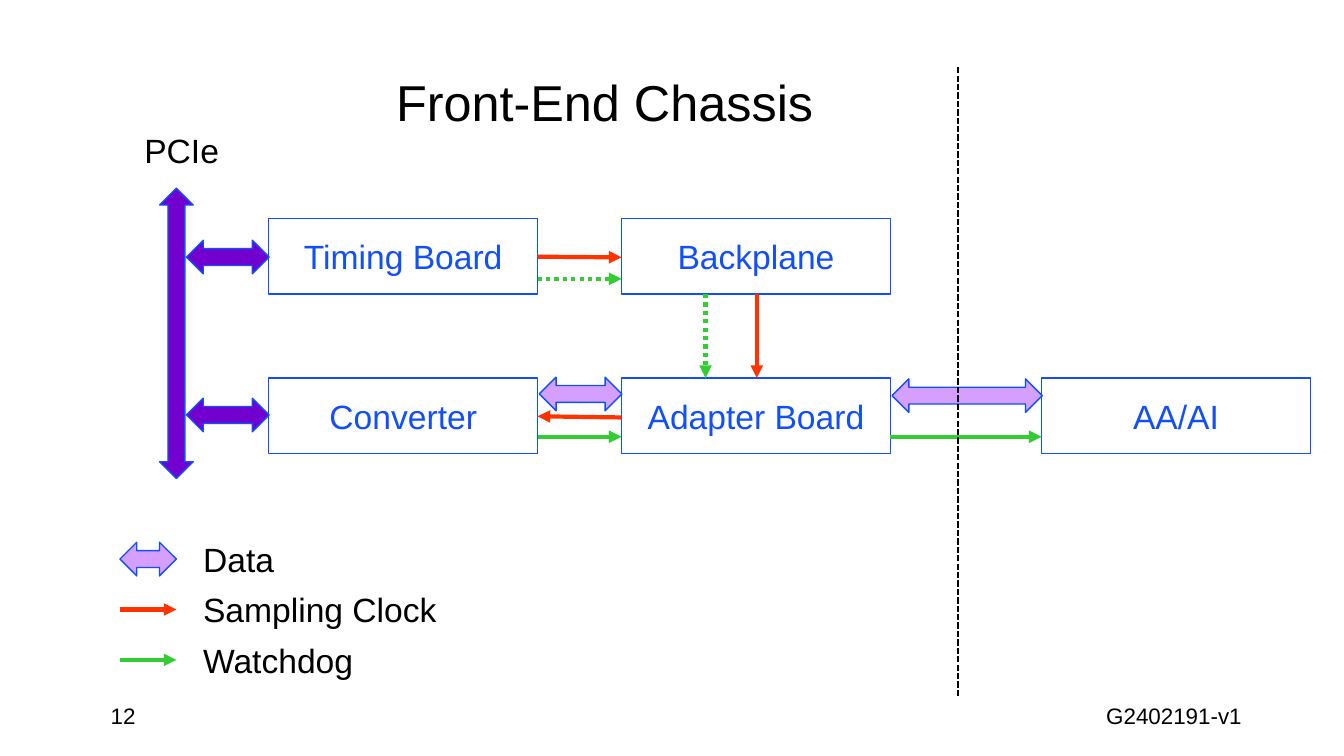
"""Builds the front-end chassis block diagram slide."""
from lxml.etree import SubElement
from pptx import Presentation
from pptx.dml.color import RGBColor
from pptx.enum.dml import MSO_LINE
from pptx.enum.shapes import MSO_CONNECTOR, MSO_SHAPE
from pptx.enum.text import MSO_ANCHOR, PP_ALIGN
from pptx.oxml.ns import qn
from pptx.util import Inches, Pt

COLORS = {
    "text": "000000",
    "outline": "114FFB",
    "data": "D49FFF",
    "bus": "7200CF",
    "clock": "FF3300",
    "watchdog": "33CC33",
}
FONT = "Arial"
CELL = Inches(1) / 6
COLUMNS, ROWS = 80, 45
BOX_WIDTH, BOX_HEIGHT = 16, 4.5
ARROW_HEIGHT = 2
LEFT, MIDDLE, RIGHT = 16, 37, 62
UPPER, LOWER = 13, 22.5


def grid(*cells):
    """Turn columns or rows of the grid into lengths."""
    return [round(cell * CELL) for cell in cells]


def color(name):
    """Look up a named colour."""
    return RGBColor.from_string(COLORS[name])


def write(shape, text, size, ink, align, anchor):
    """Put one styled run into a shape."""
    frame = shape.text_frame
    frame.word_wrap = True
    frame.vertical_anchor = anchor
    para = frame.paragraphs[0]
    para.alignment = align
    span = para.add_run()
    span.text = text
    span.font.name = FONT
    span.font.size = Pt(size)
    span.font.color.rgb = color(ink)


def add_label(page, text, left, top, width, height=3, size=24,
              align=PP_ALIGN.LEFT, anchor=MSO_ANCHOR.TOP):
    """Add a plain text box."""
    box = page.shapes.add_textbox(*grid(left, top, width, height))
    write(box, text, size, "text", align, anchor)


def add_outlined(page, kind, left, top, width, height):
    """Add a preset shape with the thin blue outline."""
    shape = page.shapes.add_shape(kind, *grid(left, top, width, height))
    shape.shadow.inherit = False
    shape.line.color.rgb = color("outline")
    shape.line.width = Pt(1)
    return shape


def add_board(page, text, left, top):
    """Add a board box with its name."""
    board = add_outlined(page, MSO_SHAPE.RECTANGLE, left, top, BOX_WIDTH, BOX_HEIGHT)
    board.fill.background()
    write(board, text, 24, "outline", PP_ALIGN.CENTER, MSO_ANCHOR.MIDDLE)


def add_block_arrow(page, fill, left, top, width, rotation=0):
    """Add a filled double-headed arrow."""
    arrow = add_outlined(page, MSO_SHAPE.LEFT_RIGHT_ARROW, left, top, width, ARROW_HEIGHT)
    arrow.fill.solid()
    arrow.fill.fore_color.rgb = color(fill)
    arrow.rotation = rotation


def add_line(page, ink, start, end, width=3, dash=None, head=True):
    """Add a straight line, with an arrowhead at its end if wanted."""
    line = page.shapes.add_connector(MSO_CONNECTOR.STRAIGHT, *grid(*start, *end))
    line.line.color.rgb = color(ink)
    line.line.width = Pt(width)
    if dash:
        line.line.dash_style = dash
    if head:
        SubElement(line.line._get_or_add_ln(), qn("a:tailEnd"), type="triangle")
    SubElement(line._element.spPr, qn("a:effectLst"))


def add_boards(page):
    """Place the five boards."""
    for text, left, top in (
        ("Timing Board", LEFT, UPPER),
        ("Backplane", MIDDLE, UPPER),
        ("Converter", LEFT, LOWER),
        ("Adapter Board", MIDDLE, LOWER),
        ("AA/AI", RIGHT, LOWER),
    ):
        add_board(page, text, left, top)


def add_buses(page):
    """Place the PCIe bus and the data links."""
    add_label(page, "PCIe", 8, 7.45, 6)
    for fill, left, top, width, rotation in (
        ("bus", 1.86, 18.84, 17.28, 270),
        ("bus", 11.1, 14.3, 4.92, 0),
        ("bus", 11.1, 23.7, 4.92, 0),
        ("data", 32.1, 22.45, 4.92, 0),
        ("data", 53.1, 22.55, 8.94, 0),
    ):
        add_block_arrow(page, fill, left, top, width, rotation)


def add_signals(page):
    """Place the clock and watchdog arrows."""
    left_edge, middle_edge = LEFT + BOX_WIDTH, MIDDLE + BOX_WIDTH
    upper_edge = UPPER + BOX_HEIGHT
    dots = MSO_LINE.ROUND_DOT
    for ink, start, end, dash in (
        ("clock", (left_edge, 15.28), (MIDDLE, 15.32), None),
        ("clock", (45.05, upper_edge), (45.05, LOWER), None),
        ("clock", (MIDDLE, 24.85), (left_edge, 24.78), None),
        ("watchdog", (left_edge, 26), (MIDDLE, 26), None),
        ("watchdog", (middle_edge, 26), (RIGHT, 26), None),
        ("watchdog", (left_edge, 16.6), (MIDDLE, 16.6), dots),
        ("watchdog", (42, upper_edge), (42, LOWER), dots),
    ):
        add_line(page, ink, start, end, dash=dash)


def add_legend(page):
    """List the link types with their samples."""
    start, end = 7.14, 10.5
    entries = (("Data", "data"), ("Sampling Clock", "clock"), ("Watchdog", "watchdog"))
    for index, (text, ink) in enumerate(entries):
        middle = 33.28 + 3 * index
        add_label(page, text, 11.5, middle - 1.5, 17.5)
        if ink == "data":
            add_block_arrow(page, ink, start, middle - ARROW_HEIGHT / 2, end - start)
        else:
            add_line(page, ink, (start, middle), (end, middle))


def main():
    """Build and save the slide."""
    deck = Presentation()
    deck.slide_width, deck.slide_height = grid(COLUMNS, ROWS)
    page = deck.slides.add_slide(deck.slide_layouts[6])
    add_label(page, "Front-End Chassis", 6, 3.4, 60, 4.75, 36,
              PP_ALIGN.CENTER, MSO_ANCHOR.BOTTOM)
    add_boards(page)
    add_buses(page)
    add_signals(page)
    add_legend(page)
    add_line(page, "text", (57, 4), (57, 41.5), 1.5, MSO_LINE.SQUARE_DOT, False)
    add_label(page, "12", 6, 41.5, 8.5, 2.2, 16)
    add_label(page, "G2402191-v1", 62.5, 41.5, 12, 2.2, 16, PP_ALIGN.RIGHT)
    deck.save("out.pptx")


if __name__ == "__main__":
    main()
